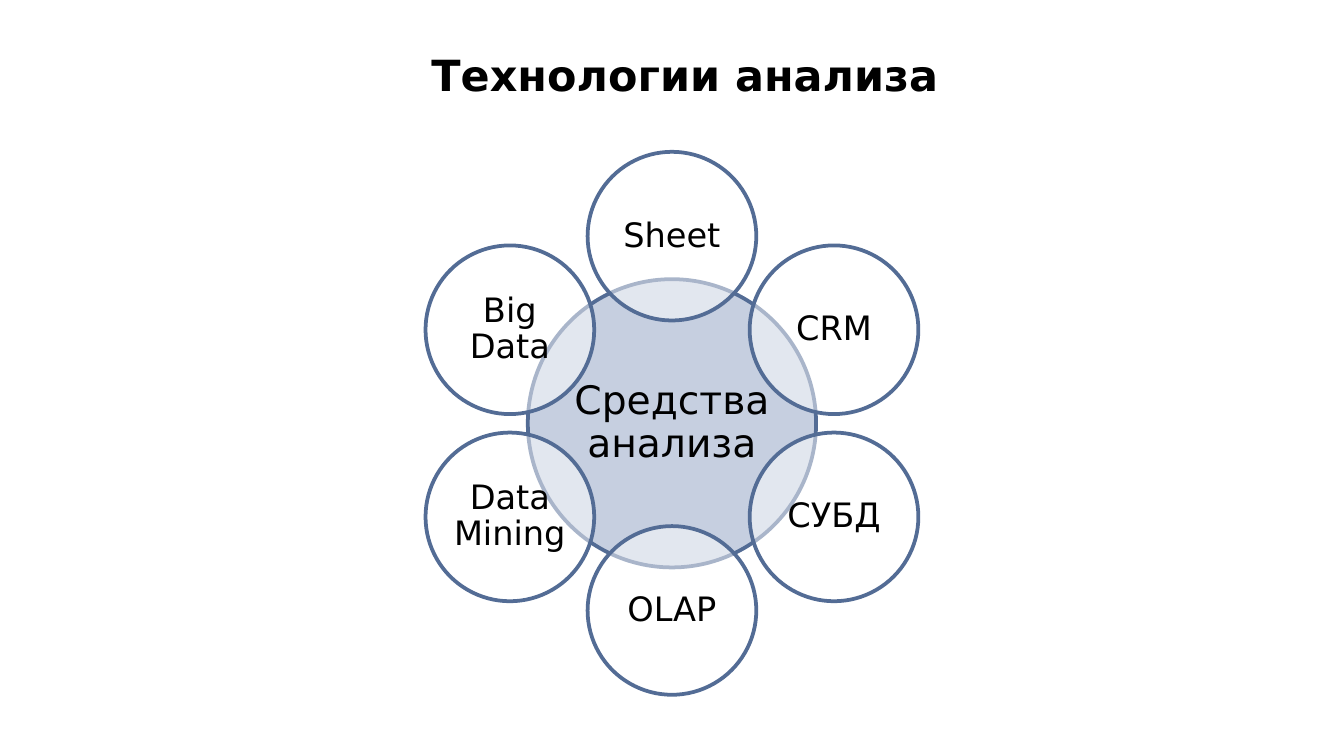
from math import cos, radians, sin

from lxml import etree
from pptx import Presentation
from pptx.dml.color import RGBColor
from pptx.enum.shapes import MSO_SHAPE
from pptx.enum.text import MSO_ANCHOR, PP_ALIGN
from pptx.oxml.ns import qn
from pptx.util import Pt

PX = 4572
OVAL = MSO_SHAPE.OVAL
MIDDLE = MSO_ANCHOR.MIDDLE
LEFT, CENTER = PP_ALIGN.LEFT, PP_ALIGN.CENTER
FONT = "DejaVu Sans"
COLORS = {"text": "000000", "hub": "8EA1C2", "ring": "FFFFFF", "line": "536C95"}
TITLE_FORMAT = {"name": FONT, "size": Pt(23), "bold": True}
HUB_FORMAT = {"name": FONT, "size": Pt(21), "bold": False}
RING_FORMAT = {"name": FONT, "size": Pt(18), "bold": False}
TOOLS = ["Sheet", "CRM", "СУБД", "OLAP", "Data Mining", "Big Data"]


def color(key):
    return RGBColor.from_string(COLORS[key])


def write(tf, text, align, font_format):
    tf.word_wrap = True
    tf.vertical_anchor = MIDDLE
    p = tf.paragraphs[0]
    p.alignment = align
    r = p.add_run()
    r.text = text
    for name, value in font_format.items():
        setattr(r.font, name, value)
    r.font.color.rgb = color("text")
    return p


def add_title(s, box, text):
    sp = s.shapes.title
    sp.left, sp.top, sp.width, sp.height = [v * PX for v in box]
    write(sp.text_frame, text, LEFT, TITLE_FORMAT)


def add_circle(s, cx, cy, size, text, fill, font_format):
    left, top = [round((c - size / 2) * PX) for c in (cx, cy)]
    sp = s.shapes.add_shape(OVAL, left, top, size * PX, size * PX)
    sp.shadow.inherit = False
    sp.fill.solid()
    sp.fill.fore_color.rgb = color(fill)
    srgb = sp.fill._xPr.find(qn("a:solidFill"))[0]
    etree.SubElement(srgb, qn("a:alpha"), val="50000")
    sp.line.color.rgb = color("line")
    sp.line.width = Pt(2)
    tf = sp.text_frame
    for side in ("left", "top", "right", "bottom"):
        setattr(tf, f"margin_{side}", 5 * PX)
    write(tf, text, CENTER, font_format).line_spacing = 0.9


def add_radial_diagram(s, box, hub, tools, hub_size=429, ring_size=251):
    left, top, width, height = box
    cx, cy = left + width / 2, top + height / 2
    radius = (height - ring_size) / 2
    add_circle(s, cx, cy, hub_size, hub, "hub", HUB_FORMAT)
    for i, tool in enumerate(tools):
        angle = radians(360 / len(tools) * i - 90)
        x, y = cx + radius * cos(angle), cy + radius * sin(angle)
        add_circle(s, x, y, ring_size, tool, "ring", RING_FORMAT)


def main():
    prs = Presentation()
    prs.slide_width, prs.slide_height = 2000 * PX, 1125 * PX
    s = prs.slides.add_slide(prs.slide_layouts[5])
    add_radial_diagram(s, (633, 226, 734, 808), "Средства анализа", TOOLS)
    add_title(s, (622, 58, 1328, 106), "Технологии анализа")
    prs.save("out.pptx")


if __name__ == "__main__":
    main()
